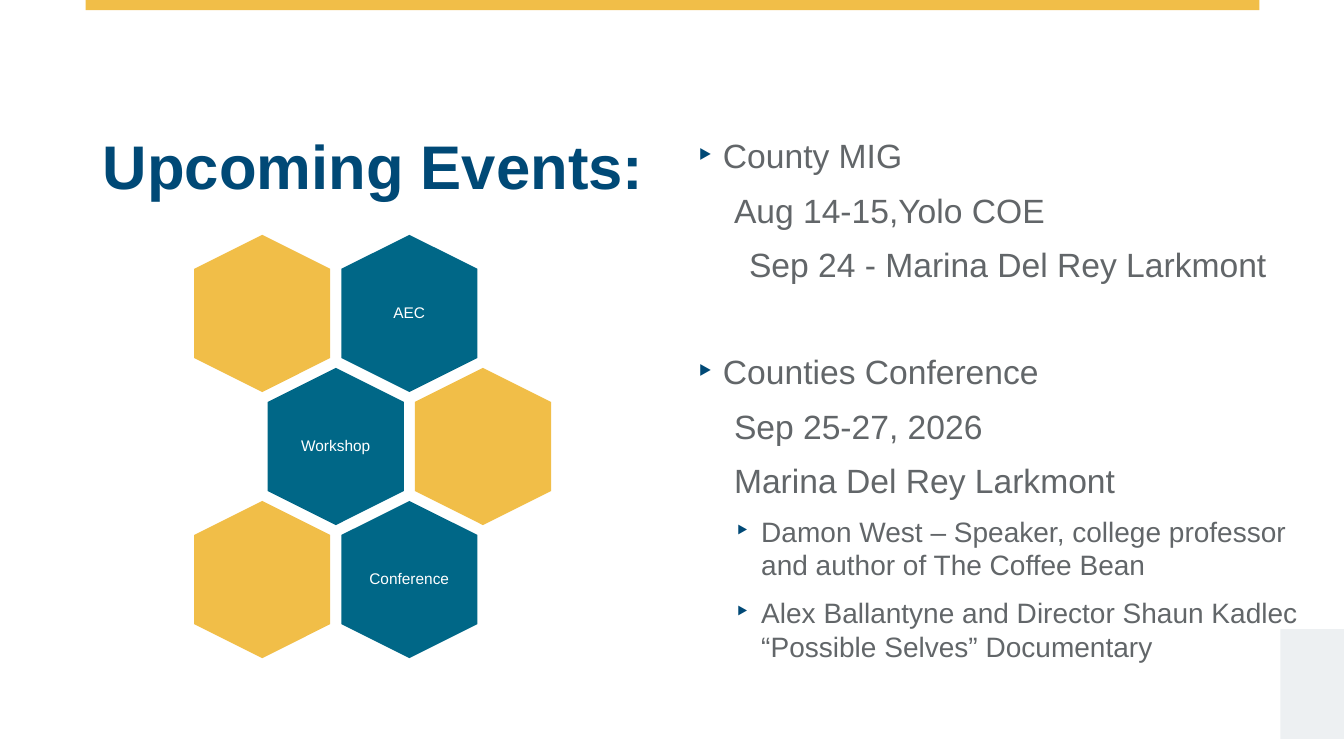
from pptx import Presentation
from pptx.dml.color import RGBColor
from pptx.enum.shapes import MSO_SHAPE
from pptx.enum.text import MSO_ANCHOR, MSO_AUTO_SIZE, PP_ALIGN
from pptx.oxml.ns import qn
from pptx.util import Inches, Pt
from lxml.etree import SubElement

COLORS = {"navy": "004976", "teal": "006787", "gold": "F1BE48",
          "gray": "626669", "pale": "EDF0F2", "white": "FFFFFF"}
FONT = "Arial"
CELL = Inches(0.1)

HEX_LENGTH, HEX_BREADTH = 15.6, 13.5
HEX_STEP_X, HEX_STEP_Y = 14.6, 13.2
FIRST_HEX_X, FIRST_HEX_Y = 26, 31.1
HEX_ROWS = [(None, "AEC"), ("Workshop", None), (None, "Conference")]

EVENTS = [
    ("County MIG", "topic", 0),
    ("Aug 14-15,Yolo COE", "detail", 10),
    ("Sep 24 - Marina Del Rey Larkmont", "centered", 10),
    ("Counties Conference", "topic", 48),
    ("Sep 25-27, 2026", "detail", 10),
    ("Marina Del Rey Larkmont", "detail", 10),
    ("Damon West – Speaker, college professor and author of The Coffee Bean",
     "speaker", 10),
    ("Alex Ballantyne and Director Shaun Kadlec “Possible Selves” Documentary",
     "speaker", 10),
]
# level, left margin, first-line indent, size, bulleted, alignment
STYLES = {
    "topic": (0, 2.5, -2.5, 24, True, PP_ALIGN.LEFT),
    "detail": (0, 3.6, 0, 24, False, PP_ALIGN.LEFT),
    "centered": (0, 0.9, 0, 24, False, PP_ALIGN.CENTER),
    "speaker": (1, 6.3, -2.5, 20, True, PP_ALIGN.LEFT),
}


def cells(count):
    return round(count * CELL)


def place(item, left, top, width, height):
    item.left, item.top = cells(left), cells(top)
    item.width, item.height = cells(width), cells(height)


def style_font(para, size, color, bold=False):
    para.font.name = FONT
    para.font.size = Pt(size)
    para.font.bold = bold
    para.font.color.rgb = RGBColor.from_string(COLORS[color])


def set_frame(frame, anchor, left, top, right, bottom):
    frame.word_wrap = True
    frame.auto_size = MSO_AUTO_SIZE.NONE
    frame.vertical_anchor = anchor
    frame.margin_left, frame.margin_top = cells(left), cells(top)
    frame.margin_right, frame.margin_bottom = cells(right), cells(bottom)


def add_filled(shapes, kind, left, top, width, height, color):
    shape = shapes.add_shape(kind, *map(cells, (left, top, width, height)))
    shape.fill.solid()
    shape.fill.fore_color.rgb = RGBColor.from_string(COLORS[color])
    shape.line.fill.background()
    shape.shadow.inherit = False
    return shape


def add_backdrop(page, left, top, width, height, color):
    block = add_filled(page.shapes, MSO_SHAPE.RECTANGLE,
                       left, top, width, height, color)
    page.shapes.title.element.addprevious(block.element)


def set_bullet(para, margin, indent, bulleted):
    properties = para._p.get_or_add_pPr()
    properties.set("marL", str(cells(margin)))
    properties.set("indent", str(cells(indent)))
    if not bulleted:
        SubElement(properties, qn("a:buNone"))
        return
    color = SubElement(properties, qn("a:buClr"))
    SubElement(color, qn("a:srgbClr"), val=COLORS["navy"])
    SubElement(properties, qn("a:buSzPct"), val="120000")
    SubElement(properties, qn("a:buFont"), typeface=FONT)
    SubElement(properties, qn("a:buChar"), char="‣")


def fill_title(title):
    place(title, 9.2, 4, 115, 17)
    set_frame(title.text_frame, MSO_ANCHOR.BOTTOM, 1, 0, 1, 1)
    para = title.text_frame.paragraphs[0]
    para.text = "Upcoming Events:"
    para.alignment = PP_ALIGN.LEFT
    para.line_spacing = 0.8
    style_font(para, 44, "navy", bold=True)


def fill_events(body):
    place(body, 68.2, 4, 62.6, 71)
    frame = body.text_frame
    set_frame(frame, MSO_ANCHOR.TOP, 1, 9.4, 1, 1)
    for index, (text, style, gap) in enumerate(EVENTS):
        level, margin, indent, size, bulleted, alignment = STYLES[style]
        para = frame.add_paragraph() if index else frame.paragraphs[0]
        para.text = text
        para.level = level
        set_bullet(para, margin, indent, bulleted)
        para.alignment = alignment
        para.line_spacing = 1.0
        para.space_before = Pt(gap)
        para.space_after = Pt(0)
        style_font(para, size, "gray")


def add_hexagon(shapes, center_x, center_y, label):
    hexagon = add_filled(shapes, MSO_SHAPE.HEXAGON,
                         center_x - HEX_LENGTH / 2, center_y - HEX_BREADTH / 2,
                         HEX_LENGTH, HEX_BREADTH, "teal" if label else "gold")
    hexagon.rotation = 90
    hexagon.adjustments[0] = 0.25
    if label:
        box = shapes.add_textbox(cells(center_x - 4.65), cells(center_y - 5.35),
                                 cells(9.3), cells(10.7))
        set_frame(box.text_frame, MSO_ANCHOR.MIDDLE, 0.5, 0.5, 0.5, 0.5)
        para = box.text_frame.paragraphs[0]
        para.text = label
        para.alignment = PP_ALIGN.CENTER
        para.line_spacing = 0.9
        style_font(para, 11, "white")


def add_honeycomb(page):
    group = page.shapes.add_group_shape()
    for row, labels in enumerate(HEX_ROWS):
        shift = row % 2 / 2
        for column, label in enumerate(labels):
            add_hexagon(group.shapes,
                        FIRST_HEX_X + (column + shift) * HEX_STEP_X,
                        FIRST_HEX_Y + row * HEX_STEP_Y, label)


def main():
    deck = Presentation()
    deck.slide_width, deck.slide_height = Inches(13.33), Inches(7.5)
    page = deck.slides.add_slide(deck.slide_layouts[1])
    add_backdrop(page, 8.5, 0, 116.4, 1, "gold")
    add_backdrop(page, 127, 62.4, 6.3, 10.9, "pale")
    fill_title(page.shapes.title)
    add_honeycomb(page)
    fill_events(page.placeholders[1])
    deck.save("out.pptx")


if __name__ == "__main__":
    main()
